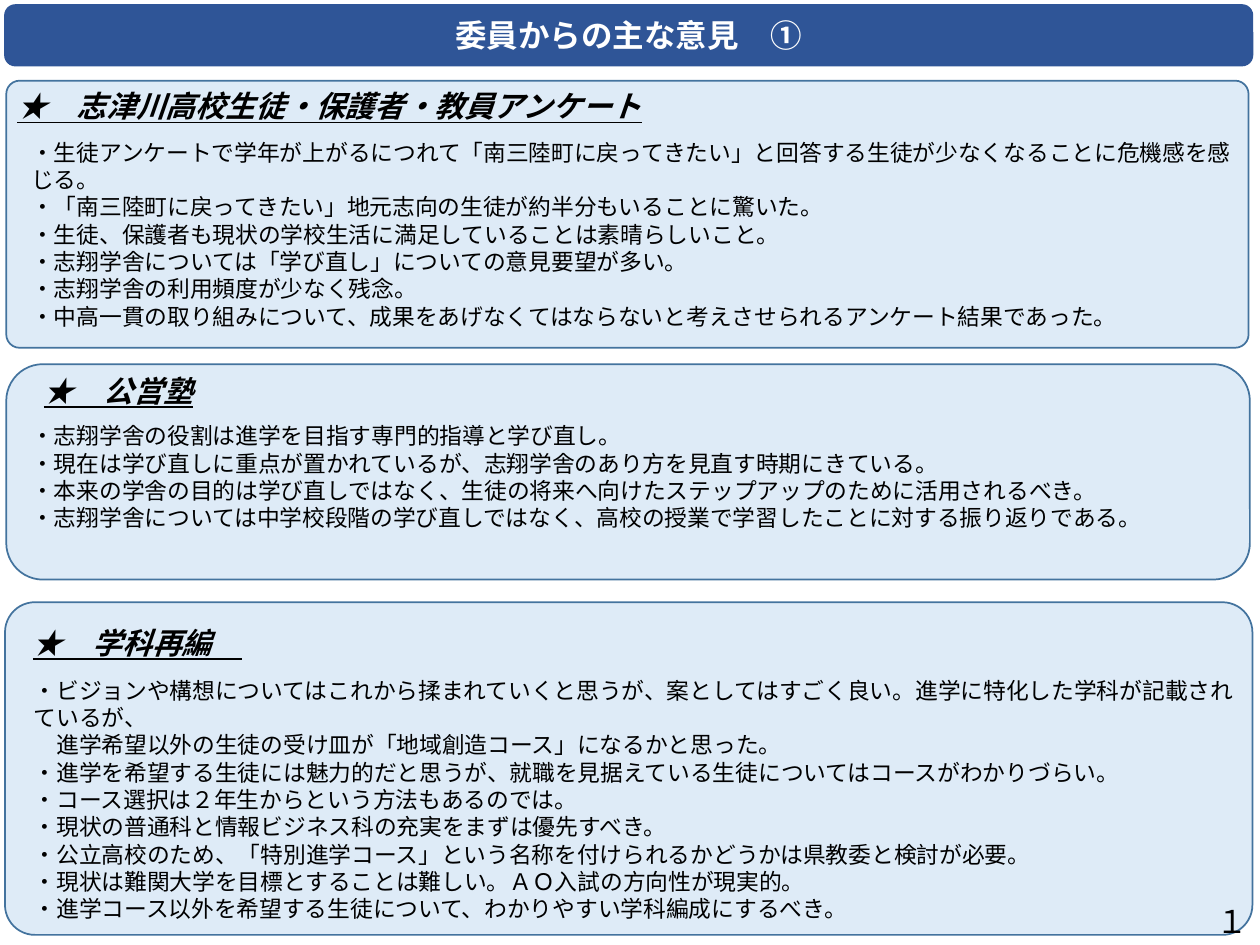
"""Builds the slide of committee members' main opinions."""
from dataclasses import dataclass

import pptx
import pptx.dml.color
import pptx.enum.shapes
import pptx.enum.text
import pptx.util

Inches = pptx.util.Inches
Align = pptx.enum.text.PP_ALIGN
BODY_FONT = "Calibri"
BLACK = "000000"


@dataclass
class Area:
    left: float
    top: float
    width: float
    height: float


@dataclass
class Style:
    size: float
    font: str = BODY_FONT
    color: str = BLACK
    align: Align = Align.LEFT
    bold: bool = False
    heading: bool = False


@dataclass
class Section:
    panel: Area
    corner: float
    heading_area: Area
    heading: str
    body_area: Area
    opinions: list[str]


TITLE = Style(18, "Noto Sans CJK JP", "FFFFFF", Align.CENTER, bold=True)
HEADING = Style(17, align=Align.CENTER, bold=True, heading=True)
OPINION = Style(13)
PAGE_NUMBER = Style(18, align=Align.RIGHT)

SECTIONS = [
    Section(
        Area(0.05, 0.64, 9.86, 2.12), 0.05,
        Area(-0.53, 0.65, 6.29, 0.39), "★　志津川高校生徒・保護者・教員アンケート",
        Area(0.15, 1.05, 9.85, 1.41),
        [
            "・生徒アンケートで学年が上がるにつれて「南三陸町に戻ってきたい」と回答する生徒が少なくなることに危機感を感じる。",
            "・「南三陸町に戻ってきたい」地元志向の生徒が約半分もいることに驚いた。",
            "・生徒、保護者も現状の学校生活に満足していることは素晴らしいこと。",
            "・志翔学舎については「学び直し」についての意見要望が多い。",
            "・志翔学舎の利用頻度が少なく残念。",
            "・中高一貫の取り組みについて、成果をあげなくてはならないと考えさせられるアンケート結果であった。",
        ],
    ),
    Section(
        Area(0.05, 2.89, 9.87, 1.71), 0.17,
        Area(-0.3, 2.91, 2.48, 0.39), "★　公営塾",
        Area(0.15, 3.3, 9.79, 1.19),
        [
            "・志翔学舎の役割は進学を目指す専門的指導と学び直し。",
            "・現在は学び直しに重点が置かれているが、志翔学舎のあり方を見直す時期にきている。",
            "・本来の学舎の目的は学び直しではなく、生徒の将来へ向けたステップアップのために活用されるべき。",
            "・志翔学舎については中学校段階の学び直しではなく、高校の授業で学習したことに対する振り返りである。",
        ],
    ),
    Section(
        Area(0.04, 4.78, 9.9, 2.64), 0.09,
        Area(-0.15, 4.91, 2.48, 0.39), "★　学科再編　",
        Area(0.17, 5.32, 9.83, 2.07),
        [
            "・ビジョンや構想についてはこれから揉まれていくと思うが、案としてはすごく良い。進学に特化した学科が記載されているが、",
            "　進学希望以外の生徒の受け皿が「地域創造コース」になるかと思った。",
            "・進学を希望する生徒には魅力的だと思うが、就職を見据えている生徒についてはコースがわかりづらい。",
            "・コース選択は２年生からという方法もあるのでは。",
            "・現状の普通科と情報ビジネス科の充実をまずは優先すべき。",
            "・公立高校のため、「特別進学コース」という名称を付けられるかどうかは県教委と検討が必要。",
            "・現状は難関大学を目標とすることは難しい。ＡＯ入試の方向性が現実的。",
            "・進学コース以外を希望する生徒について、わかりやすい学科編成にするべき。",
        ],
    ),
]


def paint(target, color: str) -> None:
    """Give a fill a solid colour."""
    target.solid()
    target.fore_color.rgb = pptx.dml.color.RGBColor.from_string(color)


def lengths(area: Area) -> list[pptx.util.Length]:
    """Return left, top, width and height as lengths."""
    return [Inches(value) for value in (area.left, area.top, area.width, area.height)]


def write(frame, lines: list[str], style: Style) -> None:
    """Write one paragraph per line in the given style."""
    frame.word_wrap = True
    for index, line in enumerate(lines):
        para = frame.paragraphs[0] if index == 0 else frame.add_paragraph()
        para.text = line
        para.alignment = style.align
        font = para.font
        font.name = style.font
        font.size = pptx.util.Pt(style.size)
        font.bold = style.bold
        font.italic = font.underline = style.heading
        paint(font.fill, style.color)


def add_panel(page, area: Area, corner: float, fill: str, line: str):
    """Add a rounded rectangle and return it."""
    panel = page.shapes.add_shape(
        pptx.enum.shapes.MSO_SHAPE.ROUNDED_RECTANGLE, *lengths(area))
    panel.adjustments[0] = corner
    panel.shadow.inherit = False
    paint(panel.fill, fill)
    paint(panel.line.fill, line)
    panel.line.width = pptx.util.Pt(1)
    return panel


def add_text(page, area: Area, lines: list[str], style: Style) -> None:
    """Add a text box that grows with its text."""
    frame = page.shapes.add_textbox(*lengths(area)).text_frame
    frame.auto_size = pptx.enum.text.MSO_AUTO_SIZE.SHAPE_TO_FIT_TEXT
    write(frame, lines, style)


def main() -> None:
    """Build and save the deck."""
    deck = pptx.Presentation()
    deck.slide_width, deck.slide_height = Inches(10), Inches(7.5)
    page = deck.slides.add_slide(deck.slide_layouts[6])

    banner = add_panel(page, Area(0.04, 0.04, 9.9, 0.48), 0.17, "2F5597", "2F5597")
    banner.text_frame.vertical_anchor = pptx.enum.text.MSO_ANCHOR.MIDDLE
    write(banner.text_frame, ["委員からの主な意見　①"], TITLE)

    for section in SECTIONS:
        add_panel(page, section.panel, section.corner, "DEEBF7", "43739E")
        add_text(page, section.heading_area, [section.heading], HEADING)
        add_text(page, section.body_area, section.opinions, OPINION)

    add_text(page, Area(9.16, 7.11, 0.84, 0.4), ["１"], PAGE_NUMBER)
    deck.save("out.pptx")


if __name__ == "__main__":
    main()
